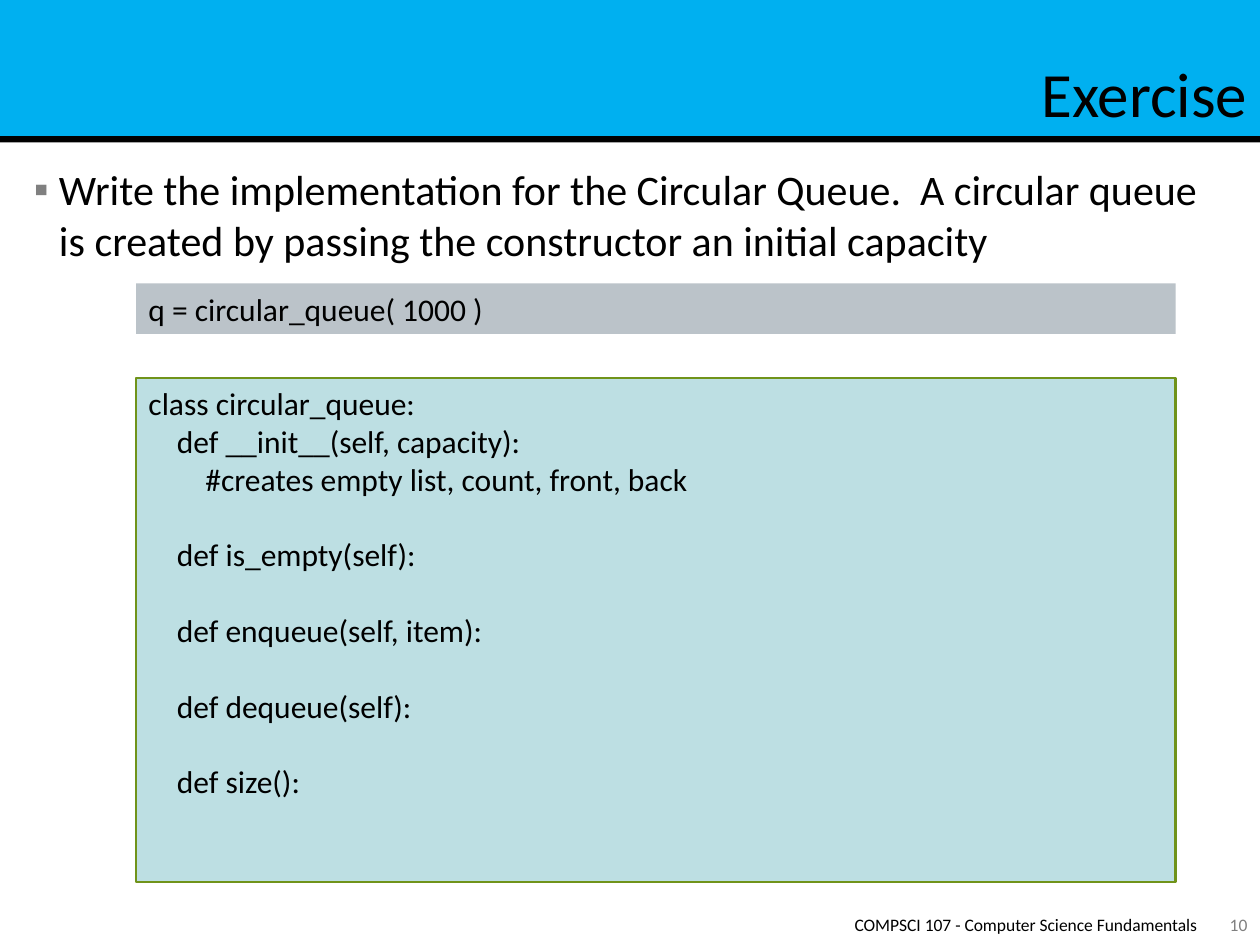
from pptx import Presentation
from pptx.dml.color import RGBColor
from pptx.enum.shapes import MSO_SHAPE as Shape
from pptx.enum.text import MSO_ANCHOR as Anchor, PP_ALIGN as Align
from pptx.oxml.ns import qn
from pptx.util import Inches, Pt
from lxml import etree

BLACK = RGBColor(0x00, 0x00, 0x00)
WHITE = RGBColor(0xFF, 0xFF, 0xFF)
GRAY = RGBColor(0x80, 0x80, 0x80)
SKY = RGBColor(0x00, 0xB0, 0xF0)
SILVER = RGBColor(0xBB, 0xC3, 0xC9)
TEAL = RGBColor(0xBD, 0xDF, 0xE3)
GREEN = RGBColor(0x70, 0x93, 0x1A)


def write(para, text, size=18, color=BLACK, align=Align.LEFT, before=0, indent=0, hanging=0):
    para.alignment = align
    para.space_before = Pt(before)
    props = para._p.get_or_add_pPr()
    props.set("marL", str(Inches(indent)))
    props.set("indent", str(-Inches(hanging)))
    span = para.add_run()
    span.text = text
    span.font.name = "Calibri"
    span.font.size = Pt(size)
    span.font.color.rgb = color


def add_box(left, top, width, height, fill=None, line=None, anchor=Anchor.TOP):
    """Add a filled rectangle, or a text box when there is no fill."""
    place = [Inches(value) for value in (left, top, width, height)]
    if fill is None:
        box = page.shapes.add_textbox(*place)
    else:
        box = page.shapes.add_shape(Shape.RECTANGLE, *place)
        box.shadow.inherit = False
        box.fill.solid()
        box.fill.fore_color.rgb = fill
        if line is None:
            box.line.fill.background()
        else:
            box.line.color.rgb = line
            box.line.width = Pt(1.25)
    box.text_frame.word_wrap = True
    box.text_frame.vertical_anchor = anchor
    return box


deck = Presentation()
deck.slide_width, deck.slide_height = Inches(10), Inches(7.5)
page = deck.slides.add_slide(deck.slide_layouts[5])
page.background.fill.solid()
page.background.fill.fore_color.rgb = WHITE

# Title band with a rule below it
add_box(0, 1.08, 10, 0.05, fill=BLACK)
title = page.shapes.title
title.left, title.top, title.width, title.height = 0, 0, Inches(10), Inches(1.08)
title.fill.solid()
title.fill.fore_color.rgb = SKY
title.text_frame.vertical_anchor = Anchor.BOTTOM
write(title.text_frame.paragraphs[0], "Exercise", size=36, align=Align.RIGHT)

# Task
task = add_box(0.17, 1.25, 9.67, 5.92).text_frame.paragraphs[0]
write(task, "Write the implementation for the Circular Queue.  A circular queue "
      "is created by passing the constructor an initial capacity",
      size=24, indent=0.2, hanging=0.2)
task_props = task._p.get_or_add_pPr()
bullet_color = etree.SubElement(task_props, qn("a:buClr"))
etree.SubElement(bullet_color, qn("a:srgbClr"), val=str(GRAY))
etree.SubElement(task_props, qn("a:buFont"), typeface="Arial")
etree.SubElement(task_props, qn("a:buChar"), char="▪")

# Footer
number = add_box(9.58, 7.25, 0.5, 0.17, anchor=Anchor.MIDDLE).text_frame
write(number.paragraphs[0], "10", size=10, color=GRAY, align=Align.CENTER)
course = add_box(4.83, 7.25, 4.67, 0.17, anchor=Anchor.MIDDLE).text_frame
course.margin_left = course.margin_right = course.margin_top = course.margin_bottom = 0
write(course.paragraphs[0], "COMPSCI 107 - Computer Science Fundamentals",
      size=10, align=Align.RIGHT)

# Code panels
usage = add_box(1.08, 2.25, 8.25, 0.4, fill=SILVER).text_frame
write(usage.paragraphs[0], "q = circular_queue( 1000 )")

CODE_INDENT = 0.226
METHOD_GAP = 21.6
code_lines = [  # indent level, space before, text
    (0, 0, "class circular_queue:"),
    (1, 0, "def __init__(self, capacity):"),
    (2, 0, "#creates empty list, count, front, back"),
    (1, METHOD_GAP, "def is_empty(self):"),
    (1, METHOD_GAP, "def enqueue(self, item):"),
    (1, METHOD_GAP, "def dequeue(self):"),
    (1, METHOD_GAP, "def size():"),
]
code = add_box(1.08, 3, 8.25, 4, fill=TEAL, line=GREEN).text_frame
for index, (level, gap, text) in enumerate(code_lines):
    para = code.add_paragraph() if index else code.paragraphs[0]
    write(para, text, before=gap, indent=level * CODE_INDENT)

deck.save("out.pptx")
